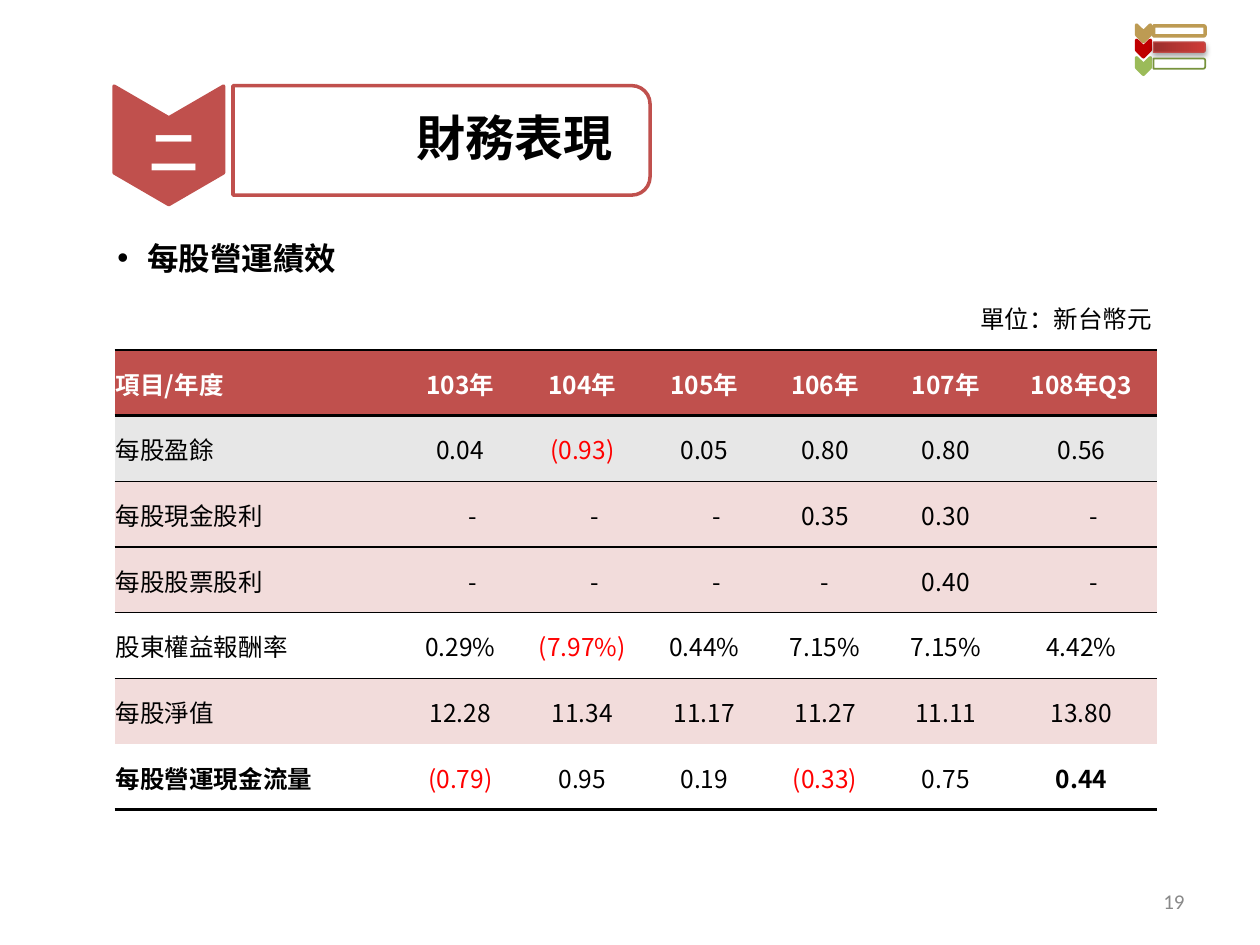
"""Build the financial performance slide with its per-share results table."""
import pptx
import pptx.dml.color
import pptx.enum.shapes
import pptx.enum.text
import pptx.oxml
import pptx.oxml.ns
import pptx.util

Pt = pptx.util.Pt
Align = pptx.enum.text.PP_ALIGN
Anchor = pptx.enum.text.MSO_ANCHOR
Shape = pptx.enum.shapes.MSO_SHAPE
qn = pptx.oxml.ns.qn
NAMESPACE = pptx.oxml.ns.nsdecls("a")
FONT = "Noto Sans CJK SC"
NO_GRID_STYLE = "{2D5ABB26-0587-4C30-8999-92F81FD0307C}"
COLORS = {
    "black": "000000", "white": "FFFFFF", "accent": "C0504D", "negative": "FF0000",
    "gray": "E7E7E7", "pink": "F2DCDB", "number": "898989", "gold": "BD9B53",
    "red": "C00000", "green": "9BBB59", "dark_green": "77933C",
    "bar_start": "9C2F2D", "bar_end": "CE3B37", "bar_line": "BF4C48",
}
COLUMN_WIDTHS = [163, 69, 70.5, 69, 69, 69, 86]
ROW_HEIGHT = 37.54
ROWS = [
    ["項目/年度", "103年", "104年", "105年", "106年", "107年", "108年Q3"],
    ["每股盈餘", "0.04", "(0.93)", "0.05", "0.80", "0.80", "0.56"],
    ["每股現金股利", "-", "-", "-", "0.35", "0.30", "-"],
    ["每股股票股利", "-", "-", "-", "-", "0.40", "-"],
    ["股東權益報酬率", "0.29%", "(7.97%)", "0.44%", "7.15%", "7.15%", "4.42%"],
    ["每股淨值", "12.28", "11.34", "11.17", "11.27", "11.11", "13.80"],
    ["每股營運現金流量", "(0.79)", "0.95", "0.19", "(0.33)", "0.75", "0.44"],
]
ROW_FILLS = ["accent", "gray", "pink", "pink", None, "pink", None]
RULES = [1, 2.25, 1, 1, 1, 1, 0, 2]
CENTERED_DASH = (3, 4)


def rgb(name):
    """Return the named colour."""
    return pptx.dml.color.RGBColor.from_string(COLORS[name])


def format_paragraph(para, size, color="black", bold=False, align=Align.LEFT, font=FONT):
    """Set the alignment and font of a paragraph."""
    para.alignment = align
    para.font.size, para.font.bold, para.font.name = Pt(size), bold, font
    para.font.color.rgb = rgb(color)
    east_asian = pptx.oxml.parse_xml(f'<a:ea {NAMESPACE} typeface="{font}"/>')
    para._p.pPr.find(qn("a:defRPr")).append(east_asian)


def add_text(page, position, text, size, anchor=Anchor.TOP, bullet_indent=0, **style):
    """Add a one-paragraph text box, with a bullet when an indent is given."""
    box = page.shapes.add_textbox(*map(Pt, position))
    frame = box.text_frame
    frame.word_wrap, frame.vertical_anchor = True, anchor
    para = frame.paragraphs[0]
    para.text = text
    if bullet_indent:
        properties = para._p.get_or_add_pPr()
        properties.set("marL", str(Pt(bullet_indent)))
        properties.set("indent", str(-Pt(bullet_indent)))
        properties.append(pptx.oxml.parse_xml(f'<a:buFont {NAMESPACE} typeface="Arial"/>'))
        properties.append(pptx.oxml.parse_xml(f'<a:buChar {NAMESPACE} char="•"/>'))
    format_paragraph(para, size, **style)
    return box


def add_turned_shape(page, kind, position, fill, line, weight):
    """Add a preset shape turned a quarter clockwise."""
    shape = page.shapes.add_shape(kind, *map(Pt, position))
    shape.rotation = 90
    shape.shadow.inherit = False
    shape.line.color.rgb, shape.line.width = rgb(line), Pt(weight)
    if fill:
        shape.fill.solid()
        shape.fill.fore_color.rgb = rgb(fill)
    else:
        shape.fill.background()
    return shape


def add_heading(page):
    """Add the section marker and the framed slide title."""
    add_turned_shape(page, Shape.ROUND_2_SAME_RECTANGLE, (221, -38.9, 62.6, 238.3), "white", "accent", 2)
    title = page.shapes.title
    title.left, title.top, title.width, title.height = map(Pt, (133, 49, 335.5, 62.6))
    frame = title.text_frame
    frame.auto_size = pptx.enum.text.MSO_AUTO_SIZE.NONE
    frame.vertical_anchor = Anchor.MIDDLE
    frame.margin_left = Pt(105)
    frame.margin_top = frame.margin_right = frame.margin_bottom = Pt(1.4)
    frame.text = "財務表現"
    frame.paragraphs[0].line_spacing = 0.9
    format_paragraph(frame.paragraphs[0], 28, bold=True)
    page.shapes._spTree.append(title._element)
    marker = add_turned_shape(page, Shape.CHEVRON, (62.6, 51.8, 67.7, 62.6), "accent", "accent", 2)
    marker.adjustments[0] = 0.29
    numeral = add_text(page, (48.2, 72, 102.2, 32.4), "二", 28, Anchor.MIDDLE,
                       color="white", bold=True, align=Align.CENTER)
    numeral.text_frame.margin_top = numeral.text_frame.margin_bottom = Pt(1.4)
    numeral.text_frame.paragraphs[0].line_spacing = 0.9


def add_section_index(page):
    """Add the small three-section index with its current section filled."""
    for top, color in ((15.1, "gold"), (33.8, "green"), (23.8, "red")):
        add_turned_shape(page, Shape.CHEVRON, (648.7, top, 9.4, 7.9), color, color, 2)
    bars = [
        add_turned_shape(page, Shape.ROUND_2_SAME_RECTANGLE, (671, top, 5.8, 29.5), fill, line, weight)
        for top, fill, line, weight in (
            (2.9, None, "gold", 2), (12.2, "red", "bar_line", 0.75), (21.6, "white", "dark_green", 1))
    ]
    current = bars[1]
    current.fill.gradient()
    current.fill.gradient_angle = 90
    for stop, color in zip(current.fill.gradient_stops, ("bar_start", "bar_end")):
        stop.color.rgb = rgb(color)
    current._element.spPr.find(qn("a:effectLst")).append(pptx.oxml.parse_xml(
        f'<a:outerShdw {NAMESPACE} blurRad="{Pt(3.1)}" dist="{Pt(1.8)}" dir="5400000" rotWithShape="0">'
        f'<a:srgbClr val="{COLORS["black"]}"><a:alpha val="35000"/></a:srgbClr></a:outerShdw>'))


def set_rules(cell, top, bottom):
    """Draw the rules above and below a table cell."""
    properties = cell._tc.get_or_add_tcPr()
    for index, (side, weight) in enumerate((("T", top), ("B", bottom))):
        paint = f'<a:solidFill><a:srgbClr val="{COLORS["black"]}"/></a:solidFill>' if weight else "<a:noFill/>"
        properties.insert(index, pptx.oxml.parse_xml(
            f'<a:ln{side} {NAMESPACE} w="{Pt(weight)}">{paint}</a:ln{side}>'))


def fill_cell(cell, row, column):
    """Write and format one table cell."""
    text = ROWS[row][column]
    last_row = row == len(ROWS) - 1
    color = "white" if row == 0 else "negative" if text.startswith("(") else "black"
    shifted = text == "-" and (row, column) != CENTERED_DASH
    cell.margin_left = Pt(14.7 if shifted else 0.7)
    cell.margin_top = cell.margin_right = Pt(0.7)
    cell.margin_bottom = 0
    cell.vertical_anchor = Anchor.MIDDLE
    cell.text = text
    format_paragraph(cell.text_frame.paragraphs[0], 14, color,
                     bold=row == 0 or (last_row and column in (0, len(COLUMN_WIDTHS) - 1)),
                     align=Align.CENTER if column else Align.LEFT)
    if ROW_FILLS[row]:
        cell.fill.solid()
        cell.fill.fore_color.rgb = rgb(ROW_FILLS[row])
    else:
        cell.fill.background()
    set_rules(cell, RULES[row], RULES[row + 1])


def add_results_table(page):
    """Add the table of per-share results by year."""
    frame = page.shapes.add_table(len(ROWS), len(COLUMN_WIDTHS), Pt(65.5), Pt(200),
                                  Pt(sum(COLUMN_WIDTHS)), Pt(ROW_HEIGHT * len(ROWS)))
    table = frame.table
    table.horz_banding = False
    table._tbl.tblPr.find(qn("a:tableStyleId")).text = NO_GRID_STYLE
    for column, width in zip(table.columns, COLUMN_WIDTHS):
        column.width = Pt(width)
    for row_index, row in enumerate(table.rows):
        row.height = Pt(ROW_HEIGHT)
        for column_index, cell in enumerate(row.cells):
            fill_cell(cell, row_index, column_index)


def main():
    """Build and save the deck."""
    deck = pptx.Presentation()
    deck.slide_width, deck.slide_height = Pt(720), Pt(540)
    page = deck.slides.add_slide(deck.slide_layouts[5])
    add_text(page, (553, 170, 124.6, 26.6), "單位：新台幣元", 14)
    add_results_table(page)
    add_text(page, (60, 133, 402.5, 29), "每股營運績效", 18, bullet_indent=17, bold=True)
    add_heading(page)
    add_section_index(page)
    add_text(page, (516, 500.4, 168, 28.8), "19", 12, Anchor.MIDDLE,
             color="number", align=Align.RIGHT, font="Calibri")
    deck.save("out.pptx")


if __name__ == "__main__":
    main()
